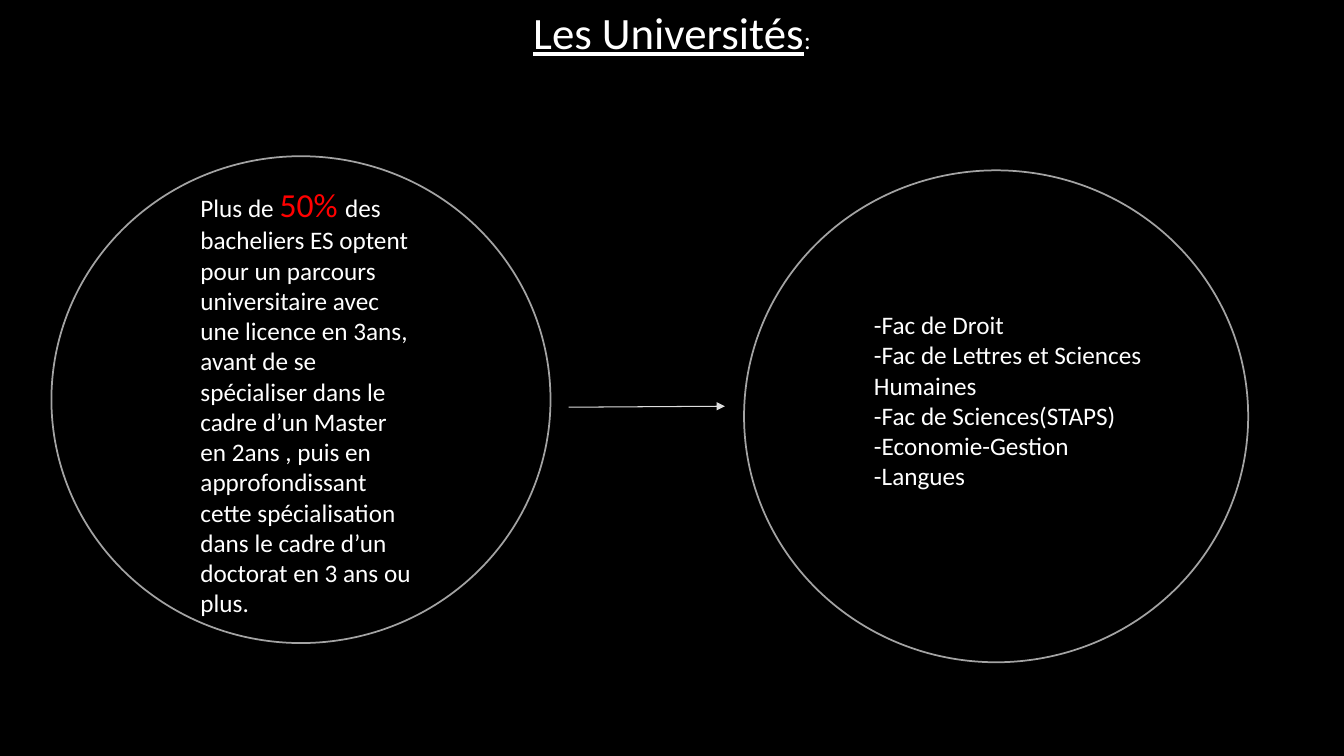
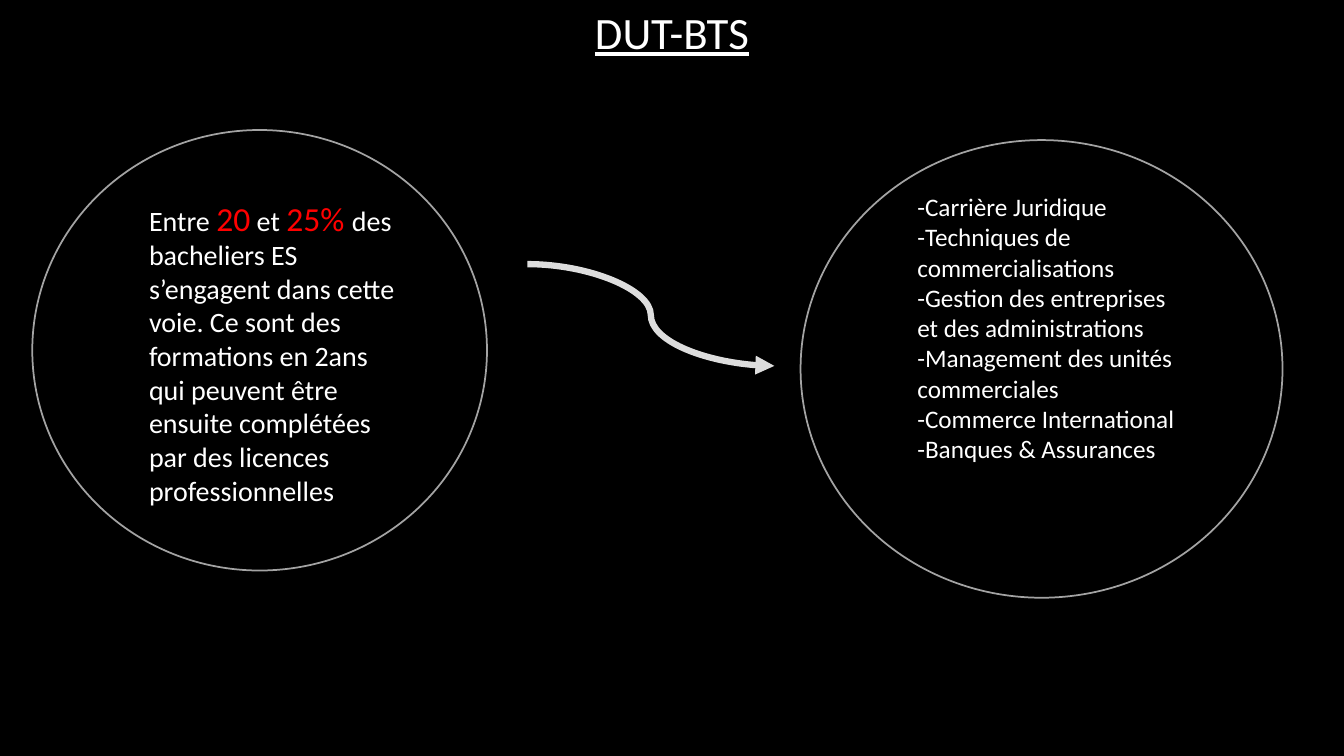
from lxml.etree import SubElement
from pptx import Presentation
from pptx.dml.color import RGBColor
from pptx.enum.shapes import MSO_CONNECTOR, MSO_SHAPE
from pptx.enum.text import MSO_ANCHOR, MSO_AUTO_SIZE, PP_ALIGN
from pptx.oxml.ns import qn
from pptx.util import Inches, Pt


def color(hex_string):
    return RGBColor.from_string(hex_string)


def add_text(paragraph, text, size=18, fill="FFFFFF", underline=False, font="Calibri"):
    run = paragraph.add_run()
    run.text = text
    run.font.name = font
    run.font.size = Pt(size)
    run.font.color.rgb = color(fill)
    run.font.underline = underline


class Deck:
    WIDTH, HEIGHT = 13.33, 7.5
    BACKGROUND = "000000"
    OUTLINE = "A3A3A3"
    ARROW = "DDDDDD"
    HIGHLIGHT = {"size": 24, "fill": "FF0000"}
    TITLE_ONLY = 5

    def __init__(self):
        self.presentation = Presentation()
        self.presentation.slide_width = Inches(self.WIDTH)
        self.presentation.slide_height = Inches(self.HEIGHT)
        self.slide = None

    def add_slide(self, title, suffix=""):
        layout = self.presentation.slide_layouts[self.TITLE_ONLY]
        self.slide = self.presentation.slides.add_slide(layout)
        background = self.slide.background.fill
        background.solid()
        background.fore_color.rgb = color(self.BACKGROUND)
        shape = self.slide.shapes.title
        shape.left = shape.top = Inches(0)
        shape.width, shape.height = Inches(self.WIDTH), Inches(0.65)
        frame = shape.text_frame
        frame.vertical_anchor = MSO_ANCHOR.TOP
        frame.auto_size = MSO_AUTO_SIZE.NONE
        paragraph = frame.paragraphs[0]
        paragraph.alignment = PP_ALIGN.CENTER
        paragraph.line_spacing = 1.0
        add_text(paragraph, title, size=32, underline=True)
        if suffix:
            add_text(paragraph, suffix)

    def add_circle(self, circle_box, text_box, paragraphs, size=18):
        group = self.slide.shapes.add_group_shape()
        circle = group.shapes.add_shape(MSO_SHAPE.OVAL, *map(Inches, circle_box))
        circle.shadow.inherit = False
        circle.fill.background()
        circle.line.color.rgb = color(self.OUTLINE)
        circle.line.width = Pt(1.25)
        frame = group.shapes.add_textbox(*map(Inches, text_box)).text_frame
        frame.word_wrap = True
        frame.auto_size = MSO_AUTO_SIZE.SHAPE_TO_FIT_TEXT
        for index, parts in enumerate(paragraphs):
            paragraph = frame.add_paragraph() if index else frame.paragraphs[0]
            for text, highlighted in parts:
                style = self.HIGHLIGHT if highlighted else {"size": size}
                add_text(paragraph, text, **style)

    def add_list_circle(self, circle_box, text_box, items):
        self.add_circle(circle_box, text_box, [[("-" + item, False)] for item in items])

    def add_arrow(self, kind, start, end, width):
        arrow = self.slide.shapes.add_connector(kind, *map(Inches, start + end))
        arrow.line.color.rgb = color(self.ARROW)
        arrow.line.width = Pt(width)
        properties = arrow.element.find(qn("p:spPr"))
        SubElement(properties.find(qn("a:ln")), qn("a:tailEnd"), type="triangle")
        SubElement(properties, qn("a:effectLst"))


def main():
    deck = Deck()

    deck.add_slide("Les Universités", suffix=":")
    deck.add_circle((0.51, 1.55, 4.95, 4.83), (1.89, 1.78, 2.33, 4.44), [[
        ("Plus de ", False),
        ("50% ", True),
        ("des bacheliers ES optent pour un parcours universitaire avec une licence "
         "en 3ans, avant de se spécialiser dans le cadre d’un Master en 2ans , puis "
         "en approfondissant cette spécialisation dans le cadre d’un doctorat en "
         "3 ans ou plus.", False),
    ]])
    deck.add_list_circle((7.38, 1.69, 5, 4.88), (8.57, 3.02, 3.1, 2.22), [
        "Fac de Droit",
        "Fac de Lettres et Sciences Humaines",
        "Fac de Sciences(STAPS)",
        "Economie-Gestion",
        "Langues",
    ])
    deck.add_arrow(MSO_CONNECTOR.STRAIGHT, (5.64, 4.04), (7.19, 4.03), 0.75)

    deck.add_slide("DUT-BTS")
    deck.add_circle((0.32, 1.29, 4.51, 4.37), (1.38, 1.91, 2.77, 3.2), [[
        ("Entre ", False),
        ("20", True),
        (" et ", False),
        ("25% ", True),
        ("des bacheliers ES s’engagent dans cette voie. Ce sont des formations en "
         "2ans qui peuvent être ensuite complétées par des licences "
         "professionnelles", False),
    ]], size=20)
    deck.add_list_circle((7.94, 1.39, 4.78, 4.54), (9, 1.85, 2.76, 2.83), [
        "Carrière Juridique",
        "Techniques de commercialisations",
        "Gestion des entreprises et des administrations",
        "Management des unités commerciales",
        "Commerce International",
        "Banques & Assurances",
    ])
    deck.add_arrow(MSO_CONNECTOR.CURVE, (5.23, 2.62), (7.68, 3.63), 4.5)

    deck.presentation.save("out.pptx")


if __name__ == "__main__":
    main()
